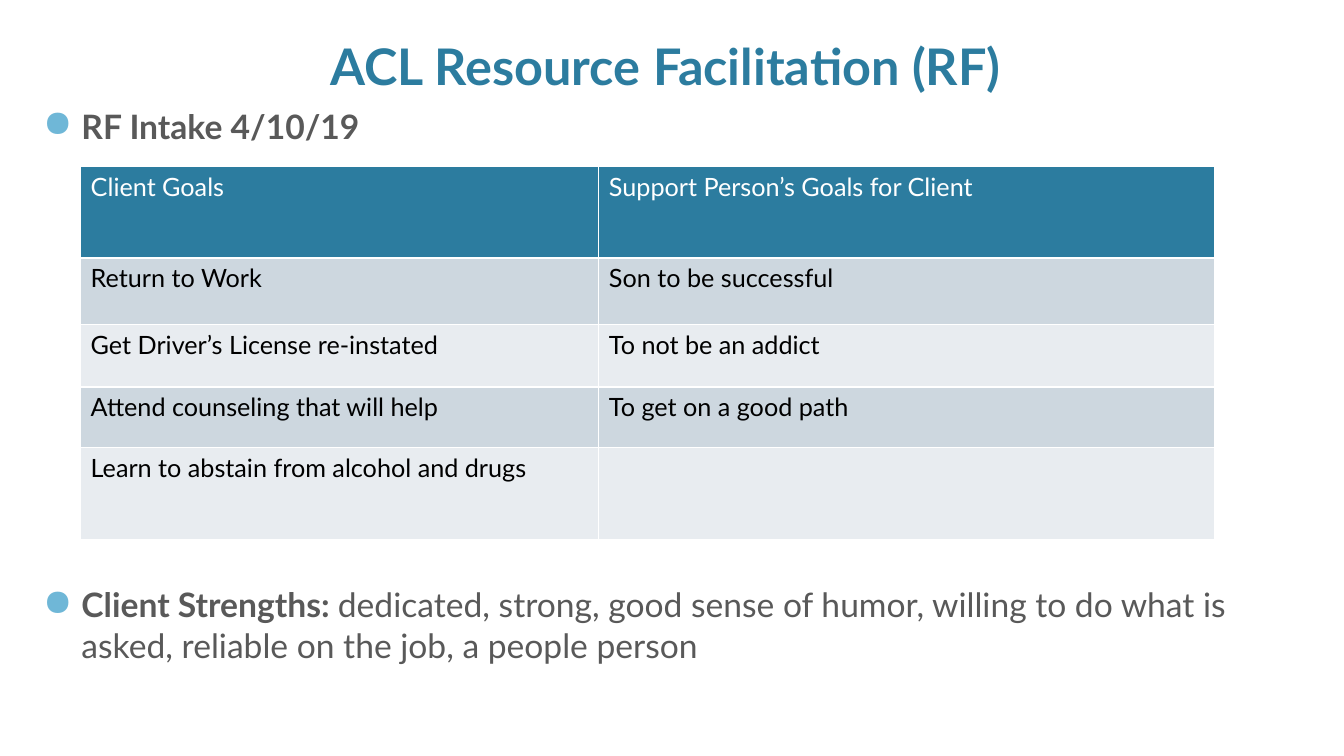
from lxml import etree
from pptx import Presentation, util as u
from pptx.dml.color import RGBColor
from pptx.enum import text
from pptx.oxml.ns import qn

PX = 9144  # EMU per px, 100 px to the inch
TEAL = RGBColor(0x2C, 0x7C, 0x9F)
SKY = RGBColor(0x6F, 0xB7, 0xD7)
GRAY = RGBColor(0x59, 0x59, 0x59)
BAND_DARK = RGBColor(0xCD, 0xD7, 0xDF)
BAND_LIGHT = RGBColor(0xE8, 0xEC, 0xF0)
WHITE = RGBColor(0xFF, 0xFF, 0xFF)
BLACK = RGBColor(0, 0, 0)

GOALS = [
    ("Client Goals", "Support Person’s Goals for Client"),
    ("Return to Work", "Son to be successful"),
    ("Get Driver’s License re-instated", "To not be an addict"),
    ("Attend counseling that will help", "To get on a good path"),
    ("Learn to abstain from alcohol and drugs", ""),
]


class Deck:
    def __init__(self, width, height, font):
        self.prs = Presentation()
        self.prs.slide_width, self.prs.slide_height = width * PX, height * PX
        self.s = self.prs.slides.add_slide(self.prs.slide_layouts[6])
        self.font = font

    def run(self, p, words, size, color, bold=False):
        r = p.add_run()
        r.text = words
        style = {"name": self.font, "size": u.Pt(size), "bold": bold}
        for key, value in style.items():
            setattr(r.font, key, value)
        r.font.color.rgb = color

    def textbox(self, x, y, w, h, anchor=text.MSO_ANCHOR.TOP):
        tf = self.s.shapes.add_textbox(x * PX, y * PX, w * PX, h * PX).text_frame
        tf.word_wrap = True
        tf.vertical_anchor = anchor
        return tf

    def title(self, box, words):
        p = self.textbox(*box, anchor=text.MSO_ANCHOR.BOTTOM).paragraphs[0]
        p.alignment = text.PP_ALIGN.CENTER
        self.run(p, words, 36, TEAL, True)

    def bullets(self, box, items, indent):
        """Each item is (space before in points, [(words, bold), ...])."""
        tf = self.textbox(*box)
        for i, (space, runs) in enumerate(items):
            p = tf.add_paragraph() if i else tf.paragraphs[0]
            p.space_before = u.Pt(space)
            pPr = p._p.get_or_add_pPr()
            pPr.set("marL", str(indent * PX))
            pPr.set("indent", str(-indent * PX))
            color = etree.SubElement(pPr, qn("a:buClr"))
            etree.SubElement(color, qn("a:srgbClr"), val=str(SKY))
            etree.SubElement(pPr, qn("a:buSzPct"), val="110000")
            etree.SubElement(pPr, qn("a:buChar"), char="●")
            for words, bold in runs:
                self.run(p, words, 24, GRAY, bold)

    def border(self, cell, color, width):
        tcPr = cell._tc.get_or_add_tcPr()
        for i, side in enumerate(("lnL", "lnR", "lnT", "lnB")):
            ln = etree.Element(qn(f"a:{side}"), w=str(u.Pt(width)))
            fill = etree.SubElement(ln, qn("a:solidFill"))
            etree.SubElement(fill, qn("a:srgbClr"), val=str(color))
            tcPr.insert(i, ln)

    def table(self, x, y, cols, rows, data):
        tbl = self.s.shapes.add_table(len(rows), len(cols), x * PX, y * PX,
                                      sum(cols) * PX, sum(rows) * PX).table
        for col, width in zip(tbl.columns, cols):
            col.width = width * PX
        for i, (row, height) in enumerate(zip(tbl.rows, rows)):
            row.height = height * PX
            band = BAND_DARK if i % 2 else BAND_LIGHT
            for cell, words in zip(row.cells, data[i]):
                cell.fill.solid()
                cell.fill.fore_color.rgb = band if i else TEAL
                self.border(cell, WHITE, 1)
                if words:
                    self.run(cell.text_frame.paragraphs[0], words, 18,
                             BLACK if i else WHITE)


def main():
    deck = Deck(1333, 750, "Lato")
    deck.title((80, 12, 1173, 88), "ACL Resource Facilitation (RF) ")
    # The second bullet's spacing leaves room for the table.
    deck.bullets((33, 100, 1262, 586), [
        (0, [("RF Intake 4/10/19", True)]),
        (313, [("Client Strengths: ", True),
               ("dedicated, strong, good sense of humor, willing to do what is "
                "asked, reliable on the job, a people person", False)]),
    ], indent=38)
    deck.table(80, 165, (514, 611), (91, 66, 62, 60, 91), GOALS)
    deck.prs.save("out.pptx")


if __name__ == "__main__":
    main()
